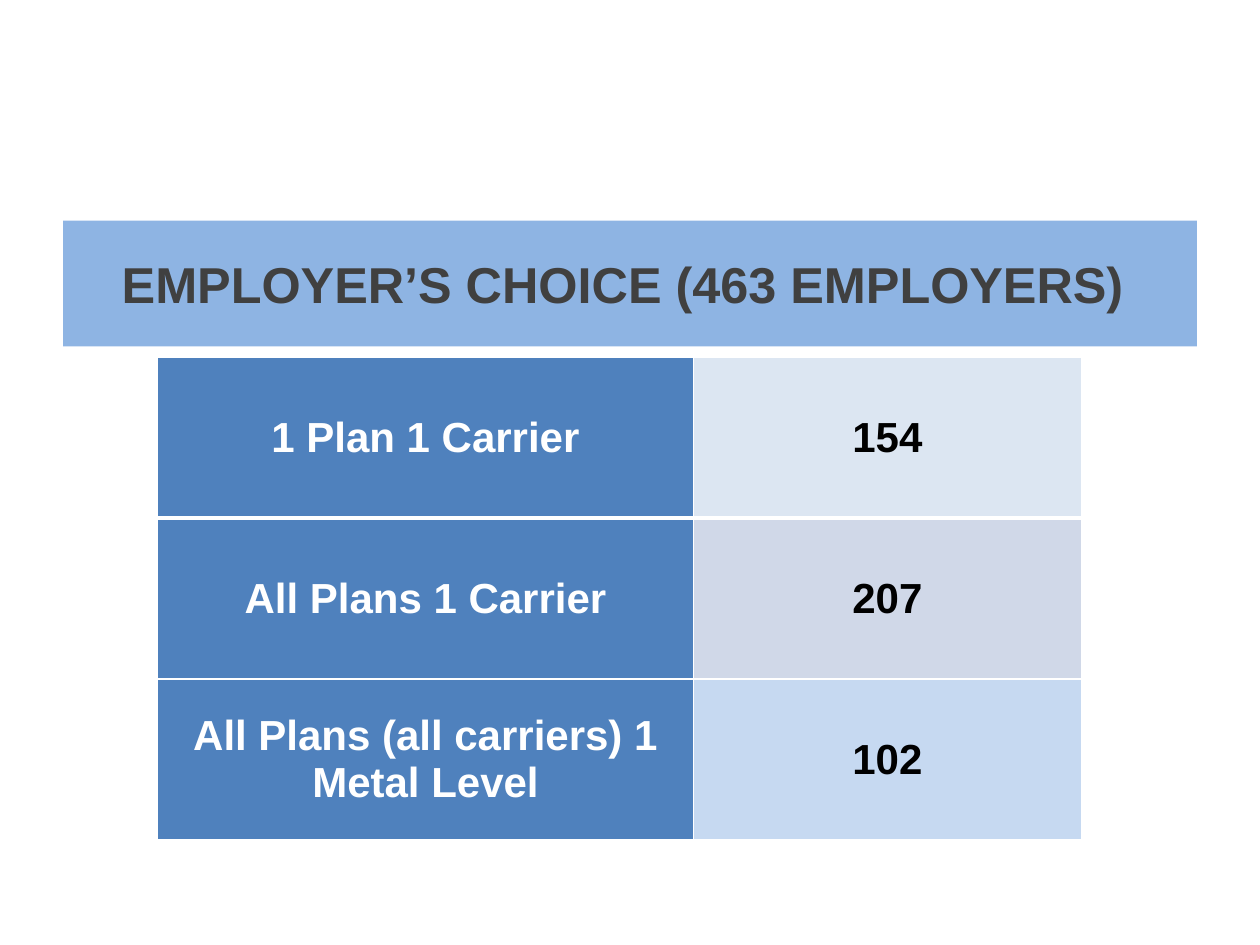
from lxml import etree
from pptx import Presentation
from pptx import util as u
from pptx.dml.color import RGBColor
from pptx.enum import text
from pptx.oxml.ns import qn

WHITE = RGBColor(0xFF, 0xFF, 0xFF)
BLACK = RGBColor(0, 0, 0)
CHARCOAL = RGBColor(0x40, 0x40, 0x40)
BANNER_BLUE = RGBColor(0x8E, 0xB4, 0xE3)
LABEL_BLUE = RGBColor(0x4F, 0x81, 0xBD)
PALE_BLUE = RGBColor(0xDC, 0xE6, 0xF2)
GREY_BLUE = RGBColor(0xD0, 0xD8, 0xE8)
SKY_BLUE = RGBColor(0xC6, 0xD9, 0xF1)

CHOICES = [
    ("1 Plan 1 Carrier", "154", PALE_BLUE),
    ("All Plans 1 Carrier", "207", GREY_BLUE),
    ("All Plans (all carriers) 1 Metal Level", "102", SKY_BLUE),
]


class SlideBuilder:
    font_name = "Arial"
    columns, rows = 120, 90

    def __init__(self, presentation):
        self.width = presentation.slide_width
        self.height = presentation.slide_height
        self.slide = presentation.slides.add_slide(presentation.slide_layouts[5])

    def place(self, left, top, width, height):
        column, row = self.width / self.columns, self.height / self.rows
        return (int(left * column), int(top * row),
                int(width * column), int(height * row))

    def set_words(self, text_frame, words, size, color):
        text_frame.text = words
        text_frame.word_wrap = True
        paragraph = text_frame.paragraphs[0]
        paragraph.alignment = text.PP_ALIGN.CENTER
        font = paragraph.runs[0].font
        font.name, font.size, font.bold = self.font_name, u.Pt(size), True
        font.color.rgb = color

    def title(self, words, area):
        shape = self.slide.shapes.title
        shape.left, shape.top, shape.width, shape.height = self.place(*area)
        shape.fill.solid()
        shape.fill.fore_color.rgb = BANNER_BLUE
        self.set_words(shape.text_frame, words, 28.8, CHARCOAL)
        shape.text_frame.vertical_anchor = text.MSO_ANCHOR.MIDDLE

    def border(self, cell, side, points):
        properties = cell._tc.get_or_add_tcPr()
        line = etree.SubElement(properties, qn(f"a:ln{side}"), w=str(u.Pt(points)))
        fill = etree.SubElement(line, qn("a:solidFill"))
        etree.SubElement(fill, qn("a:srgbClr"), val=str(WHITE))

    def cell(self, cell, words, color, fill, top, bottom):
        self.set_words(cell.text_frame, words, 24, color)
        cell.vertical_anchor = text.MSO_ANCHOR.MIDDLE
        cell.margin_left = cell.margin_right = u.Inches(0.07)
        cell.margin_top = cell.margin_bottom = 0
        for side, points in (("L", 1), ("R", 1), ("T", top), ("B", bottom)):
            self.border(cell, side, points)
        cell.fill.solid()
        cell.fill.fore_color.rgb = fill

    def choice_table(self, choices, area, label_share):
        left, top, width, height = self.place(*area)
        table = self.slide.shapes.add_table(
            len(choices), 2, left, top, width, height).table
        table.first_row = table.horz_banding = False
        table.columns[0].width = int(width * label_share)
        table.columns[1].width = width - table.columns[0].width
        for index, (label, count, fill) in enumerate(choices):
            edges = (3 if index == 1 else 1, 3 if index == 0 else 1)
            self.cell(table.cell(index, 0), label, WHITE, LABEL_BLUE, *edges)
            self.cell(table.cell(index, 1), count, BLACK, fill, *edges)


def main():
    presentation = Presentation()
    presentation.slide_width = u.Inches(10)
    presentation.slide_height = u.Inches(7.5)
    builder = SlideBuilder(presentation)
    builder.title("EMPLOYER’S CHOICE (463 EMPLOYERS) ", (6, 21, 108, 12))
    builder.choice_table(CHOICES, (15, 34, 88, 46), 0.58)
    presentation.save("out.pptx")


if __name__ == "__main__":
    main()
